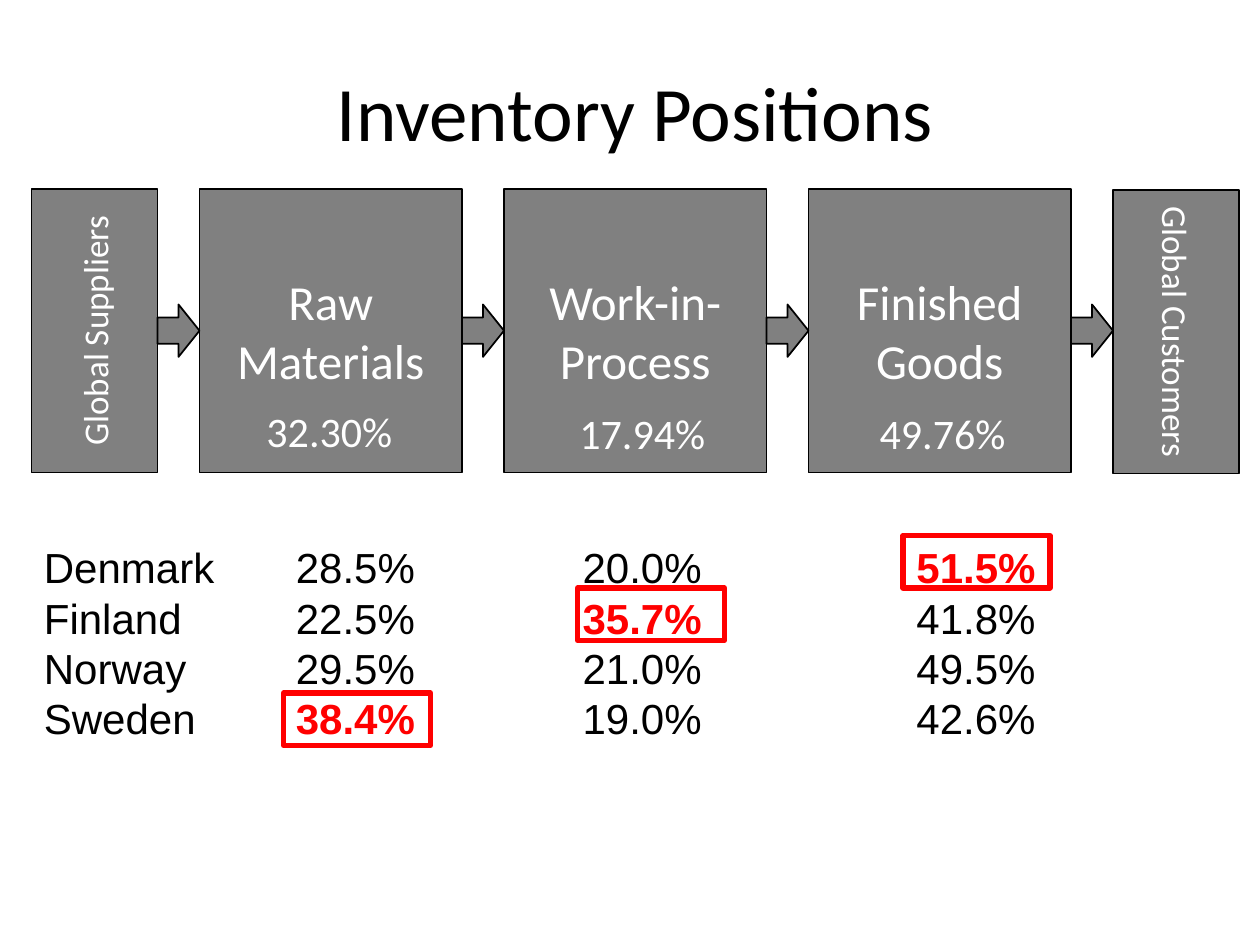
from lxml import etree
from pptx import Presentation
from pptx.dml.color import RGBColor
from pptx.enum.shapes import MSO_SHAPE
from pptx.enum.text import MSO_ANCHOR, PP_ALIGN
from pptx.oxml.ns import qn
from pptx.util import Emu, Pt

RECT, ARROW = MSO_SHAPE.RECTANGLE, MSO_SHAPE.RIGHT_ARROW
MIDDLE, TOP = MSO_ANCHOR.MIDDLE, MSO_ANCHOR.TOP
CENTER, LEFT = PP_ALIGN.CENTER, PP_ALIGN.LEFT
SCALE = 7620  # EMU per px, 120 px to the inch
COLORS = {"gray": "808080", "black": "000000", "white": "FFFFFF", "red": "FF0000"}


def px(n):
    return Emu(n * SCALE)


def rgb(name):
    return RGBColor.from_string(COLORS[name])


class Deck:
    def __init__(self, wide, high):
        self.prs = Presentation()
        self.prs.slide_width, self.prs.slide_height = px(wide), px(high)
        self.slide = self.prs.slides.add_slide(self.prs.slide_layouts[5])

    def label(self, para, text, color, size, face="Calibri", bold=False):
        run = para.add_run()
        run.text = text
        style = {"name": face, "size": Pt(size), "bold": bold}
        for key, value in style.items():
            setattr(run.font, key, value)
        run.font.color.rgb = rgb(color)

    def text(self, frame, lines, color, size, align=CENTER, anchor=MIDDLE, wrap=True):
        frame.word_wrap, frame.vertical_anchor = wrap, anchor
        for i, line in enumerate(lines):
            para = frame.add_paragraph() if i else frame.paragraphs[0]
            para.alignment = align
            self.label(para, line, color, size)

    def title(self, text, x, y, w, h):
        box = self.slide.shapes.title
        place = {"left": x, "top": y, "width": w, "height": h}
        for key, value in place.items():
            setattr(box, key, px(value))
        self.text(box.text_frame, [text], "black", 44)

    def shape(self, kind, x, y, w, h, fill="gray", line="black", width=1, turn=0):
        shape = self.slide.shapes.add_shape(kind, px(x), px(y), px(w), px(h))
        shape.shadow.inherit = False
        shape.rotation = turn
        if fill:
            shape.fill.solid()
            shape.fill.fore_color.rgb = rgb(fill)
        else:
            shape.fill.background()
        if line:
            shape.line.color.rgb = rgb(line)
            shape.line.width = Pt(width)
        else:
            shape.line.fill.background()
        return shape

    def block(self, lines, size, x, y, w, h, turn=0):
        box = self.shape(RECT, x, y, w, h, turn=turn)
        self.text(box.text_frame, lines, "white", size)

    def share(self, text, x, y):
        box = self.shape(RECT, x, y, 145, 60, line=None)
        self.text(box.text_frame, [text], "white", 24, LEFT, TOP, False)

    def rows(self, rows, tabs, x, y, w, h):
        frame = self.slide.shapes.add_textbox(px(x), px(y), px(w), px(h)).text_frame
        frame.word_wrap = True
        for i, (cells, peak) in enumerate(rows):
            para = frame.add_paragraph() if i else frame.paragraphs[0]
            para.line_spacing = Pt(28.8)
            stops = etree.SubElement(para._p.get_or_add_pPr(), qn("a:tabLst"))
            for tab in tabs:
                etree.SubElement(stops, qn("a:tab"), pos=str(px(tab)), algn="l")
            for col, cell in enumerate(cells):
                hot = col == peak
                text = "\t" + cell if col else cell
                self.label(para, text, "red" if hot else "black", 24, "Arial", hot)


def main():
    deck = Deck(1200, 900)
    deck.title("Inventory Positions", 65, 30, 1080, 150)

    # Supply chain: end blocks are turned, stages share one pitch
    first, pitch = 190, 290
    deck.block(["Global Suppliers"], 20, -45, 255, 270, 120, 270)
    deck.block(["Global Customers"], 20, 985, 256, 270, 120, 90)
    stages = [["Raw", "Materials"], ["Work-in-Process"], ["Finished Goods"]]
    for i, lines in enumerate(stages):
        deck.block(lines, 28, first + i * pitch, 180, 250, 270)
    for i in range(len(stages) + 1):
        deck.shape(ARROW, first - 40 + i * pitch, 290, 40, 50)

    # Share of each stage
    for text, x, y in [("32.30%", 242, 380), ("17.94%", 540, 382), ("49.76%", 826, 382)]:
        deck.share(text, x, y)

    # Countries, each with the column of its highlight
    rows = [
        (["Denmark", "28.5%", "20.0%", "51.5%"], 3),
        (["Finland", "22.5%", "35.7%", "41.8%"], 2),
        (["Norway", "29.5%", "21.0%", "49.5%"], None),
        (["Sweden", "38.4%", "19.0%", "42.6%"], 1),
    ]
    deck.rows(rows, [240, 513, 831], 30, 510, 978, 206)

    # Frames around the highlights
    for x, y in [(270, 660), (550, 560), (860, 510)]:
        deck.shape(RECT, x, y, 140, 50, fill=None, line="red", width=3)

    deck.prs.save("out.pptx")


if __name__ == "__main__":
    main()
